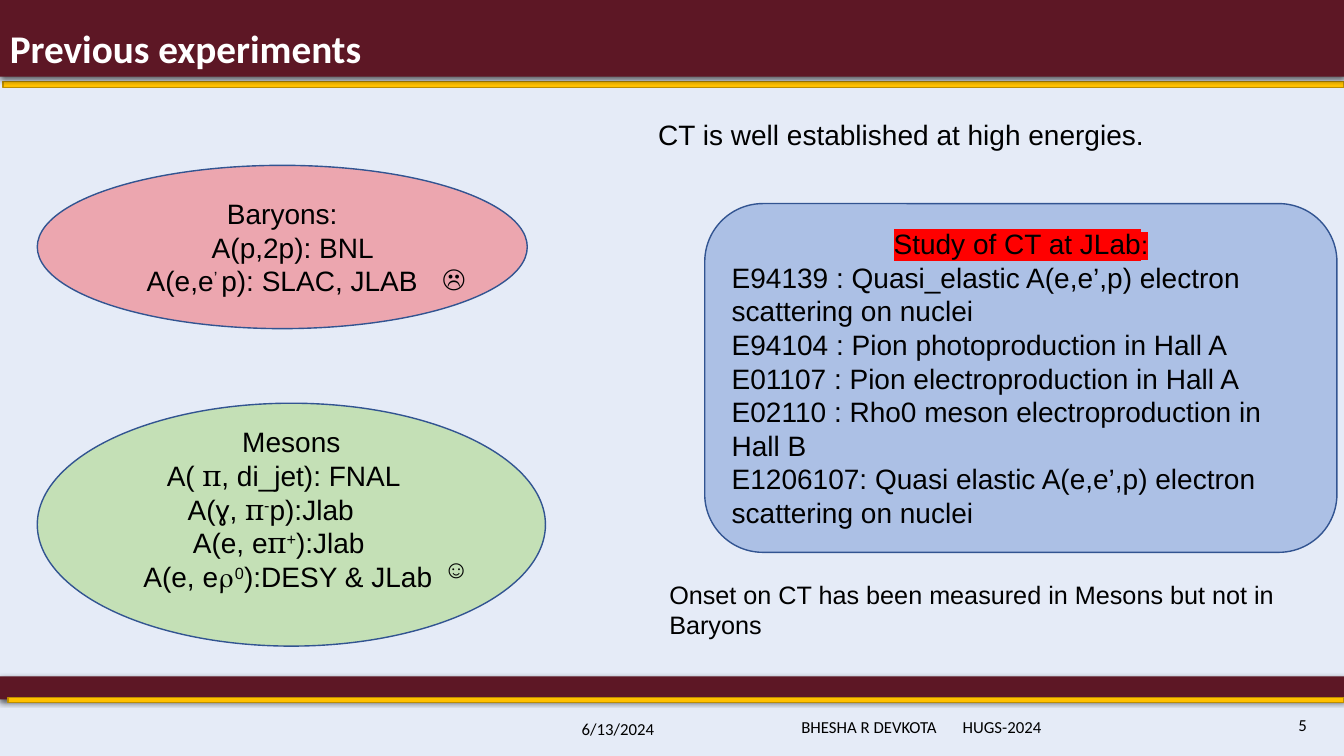
from dataclasses import dataclass

from lxml import etree
from pptx import Presentation
from pptx import util as u
from pptx.dml.color import RGBColor
from pptx.enum import shapes, text
from pptx.oxml.ns import qn

PX = 9144
LEFT, CENTER, RIGHT = text.PP_ALIGN.LEFT, text.PP_ALIGN.CENTER, text.PP_ALIGN.RIGHT
TOP, MIDDLE, BOTTOM = text.MSO_ANCHOR.TOP, text.MSO_ANCHOR.MIDDLE, text.MSO_ANCHOR.BOTTOM


@dataclass(frozen=True)
class Theme:
    """Colours, fonts and type sizes of the slide."""
    background: str = "E5EBF7"
    maroon: str = "5D1725"
    gold: str = "FFC000"
    gold_edge: str = "BD8E00"
    red: str = "FF0000"
    green: str = "92D050"
    blue: str = "4472C4"
    outline: str = "325491"
    ink: str = "000000"
    white: str = "FFFFFF"
    body_font: str = "Arial"
    label_font: str = "Calibri"
    greek_font: str = "Cambria"
    title: int = 28
    body: int = 20
    note: int = 18
    label: int = 12


THEME = Theme()


def greek(letter):
    """Describe a letter set in the Greek font."""
    return letter, {"font": THEME.greek_font}


def raised(characters):
    """Describe a superscript run."""
    return characters, {"raised": True}


def style_run(run, size, font, color, bold=False, raised=False, highlight=None):
    """Apply character formatting to one run."""
    run.font.size = u.Pt(size)
    run.font.bold = bold
    run.font.color.rgb = RGBColor.from_string(color)
    run.font.name = font
    properties = run.font._element
    if raised:
        properties.set("baseline", "30000")
    if highlight:
        mark = etree.Element(qn("a:highlight"))
        etree.SubElement(mark, qn("a:srgbClr"), val=highlight)
        properties.find(qn("a:latin")).addprevious(mark)


def write(shape, lines, size=THEME.body, font=THEME.body_font, color=THEME.ink, bold=False,
          anchor=TOP, spacing=None, bottom=5):
    """Fill a shape with lines, each an alignment, a sideways margin in px and runs."""
    frame = shape.text_frame
    frame.word_wrap = True
    frame.vertical_anchor = anchor
    frame.margin_bottom = bottom * PX
    for index, (alignment, margin, runs) in enumerate(lines):
        paragraph = frame.add_paragraph() if index else frame.paragraphs[0]
        paragraph.alignment = alignment
        paragraph.line_spacing = spacing
        if margin:
            side = "marL" if margin > 0 else "marR"
            paragraph._p.get_or_add_pPr().set(side, str(abs(margin) * PX))
        for item in runs:
            characters, changes = (item, {}) if isinstance(item, str) else item
            run = paragraph.add_run()
            run.text = characters
            style_run(run, **{"size": size, "font": font, "color": color, "bold": bold, **changes})


def add_text(slide, box, lines, **style):
    """Add a text box."""
    shape = slide.shapes.add_textbox(*(value * PX for value in box))
    write(shape, lines, **style)
    return shape


def add_panel(slide, kind, box, fill, line=None, opacity=100, shadow=False):
    """Add a filled preset shape."""
    shape = slide.shapes.add_shape(kind, *(value * PX for value in box))
    shape.shadow.inherit = False
    shape.fill.solid()
    shape.fill.fore_color.rgb = RGBColor.from_string(fill)
    properties = shape._element.spPr
    if opacity < 100:
        color = properties.find(qn("a:solidFill"))[0]
        etree.SubElement(color, qn("a:alpha"), val=str(opacity * 1000))
    if line:
        shape.line.color.rgb = RGBColor.from_string(line)
        shape.line.width = u.Pt(1)
    else:
        shape.line.fill.background()
    if shadow:
        outer = etree.SubElement(properties.find(qn("a:effectLst")), qn("a:outerShdw"),
                                 blurRad=str(u.Pt(4.5)), dist=str(u.Pt(1.5)), dir="5400000",
                                 algn="ctr", rotWithShape="0")
        color = etree.SubElement(outer, qn("a:srgbClr"), val=THEME.ink)
        etree.SubElement(color, qn("a:alpha"), val="63000")
    return shape


def add_header(slide, box):
    """Draw the title band with its gold rule."""
    left, top, width, height = box
    rectangle = shapes.MSO_SHAPE.RECTANGLE
    add_panel(slide, rectangle, (left + 3, top + height + 5, width - 3, 6), THEME.gold, THEME.gold_edge)
    band = add_panel(slide, rectangle, box, THEME.maroon, shadow=True)
    write(band, [(LEFT, 0, ["Previous experiments"])], size=THEME.title, font=THEME.label_font,
          color=THEME.white, bold=True, anchor=BOTTOM, spacing=0.9)


def add_footer(slide, box):
    """Draw the bottom band and the date, author and page number below it."""
    left, top, width, height = box
    rectangle = shapes.MSO_SHAPE.RECTANGLE
    add_panel(slide, rectangle, (left, top, width, 23), THEME.maroon, shadow=True)
    add_panel(slide, rectangle, (left + 8, top + 21, width - 8, 5), THEME.gold, THEME.gold_edge)
    style = {"size": THEME.label, "font": THEME.label_font, "anchor": MIDDLE}
    add_text(slide, (left + 567, top + 29, 200, 45), [(LEFT, 0, ["6/13/2024"])], **style)
    author = add_text(slide, (left + 785, top + 27, 300, 46),
                      [(LEFT, 0, ["BHESHA R DEVKOTA\tHUGS-2024"])], **style)
    properties = author.text_frame.paragraphs[0]._p.get_or_add_pPr()
    tabs = etree.SubElement(properties, qn("a:tabLst"))
    etree.SubElement(tabs, qn("a:tab"), pos=str(160 * PX), algn="l")
    add_text(slide, (left + 1043, top + 26, 263, 45), [(RIGHT, 0, ["5"])], **style)


def add_reactions(slide, box, fill, opacity, lines, face, face_at, bottom=5):
    """Draw an ellipse of reactions with a face beside its last line."""
    ellipse = add_panel(slide, shapes.MSO_SHAPE.OVAL, box, fill, THEME.outline, opacity)
    write(ellipse, [(CENTER, margin, runs) for margin, runs in lines], anchor=MIDDLE, bottom=bottom)
    left, top = face_at
    add_text(slide, (box[0] + left, box[1] + top, 60, 40), [(LEFT, 0, [face])], size=THEME.note)


def add_studies(slide, box):
    """Draw the rounded panel that lists the studies, with a remark above and below."""
    left, top, width, height = box
    add_text(slide, (left - 56, top - 87, 663, 60),
             [(LEFT, 0, ["CT is well established at high energies."])], spacing=0.9)
    panel = add_panel(slide, shapes.MSO_SHAPE.ROUNDED_RECTANGLE, box, THEME.blue, THEME.outline, 35)
    heading = [("Study of CT at JLab", {"highlight": THEME.red}),
               (":", {"highlight": THEME.red, "size": THEME.note})]
    studies = ["E94139 : Quasi_elastic A(e,e’,p) electron scattering on nuclei",
               "E94104 : Pion photoproduction in Hall A",
               "E01107 : Pion electroproduction in Hall A",
               "E02110 : Rho0 meson electroproduction in Hall B",
               "E1206107: Quasi elastic A(e,e’,p) electron scattering on nuclei"]
    write(panel, [(CENTER, 0, heading)] + [(LEFT, 0, [study]) for study in studies], anchor=MIDDLE)
    add_text(slide, (left - 45, top + height + 22, 680, 71),
             [(LEFT, 0, ["Onset on CT has been measured in Mesons but not in Baryons"])],
             size=THEME.note)


def main():
    """Build the slide and save it."""
    presentation = Presentation()
    presentation.slide_width, presentation.slide_height = 1333 * PX, 750 * PX
    slide = presentation.slides.add_slide(presentation.slide_layouts[6])
    slide.background.fill.solid()
    slide.background.fill.fore_color.rgb = RGBColor.from_string(THEME.background)
    add_header(slide, (0, 0, 1333, 76))
    add_footer(slide, (0, 671, 1333, 79))
    baryons = [(0, ["Baryons:"]),
               (21, ["A(p,2p): BNL"]),
               (0, ["A(e,e", raised("’ "), "p): SLAC, JLAB"])]
    mesons = [(0, ["Mesons"]),
              (-15, ["A( ", greek("п"), ", di_jet): FNAL"]),
              (-41, ["A(ɣ, ", greek("п"), raised("-"), "p):Jlab"]),
              (-25, ["A(e, e", greek("п"), raised("+"), "):Jlab"]),
              (-7, ["A(e, e", greek("⍴"), raised("0"), "):DESY & JLab"])]
    add_reactions(slide, (37, 164, 486, 162), THEME.red, 29, baryons, "☹", (392, 91))
    add_reactions(slide, (37, 400, 504, 241), THEME.green, 39, mesons, "☺", (393, 144), bottom=36)
    add_studies(slide, (699, 202, 627, 346))
    presentation.save("out.pptx")


if __name__ == "__main__":
    main()
